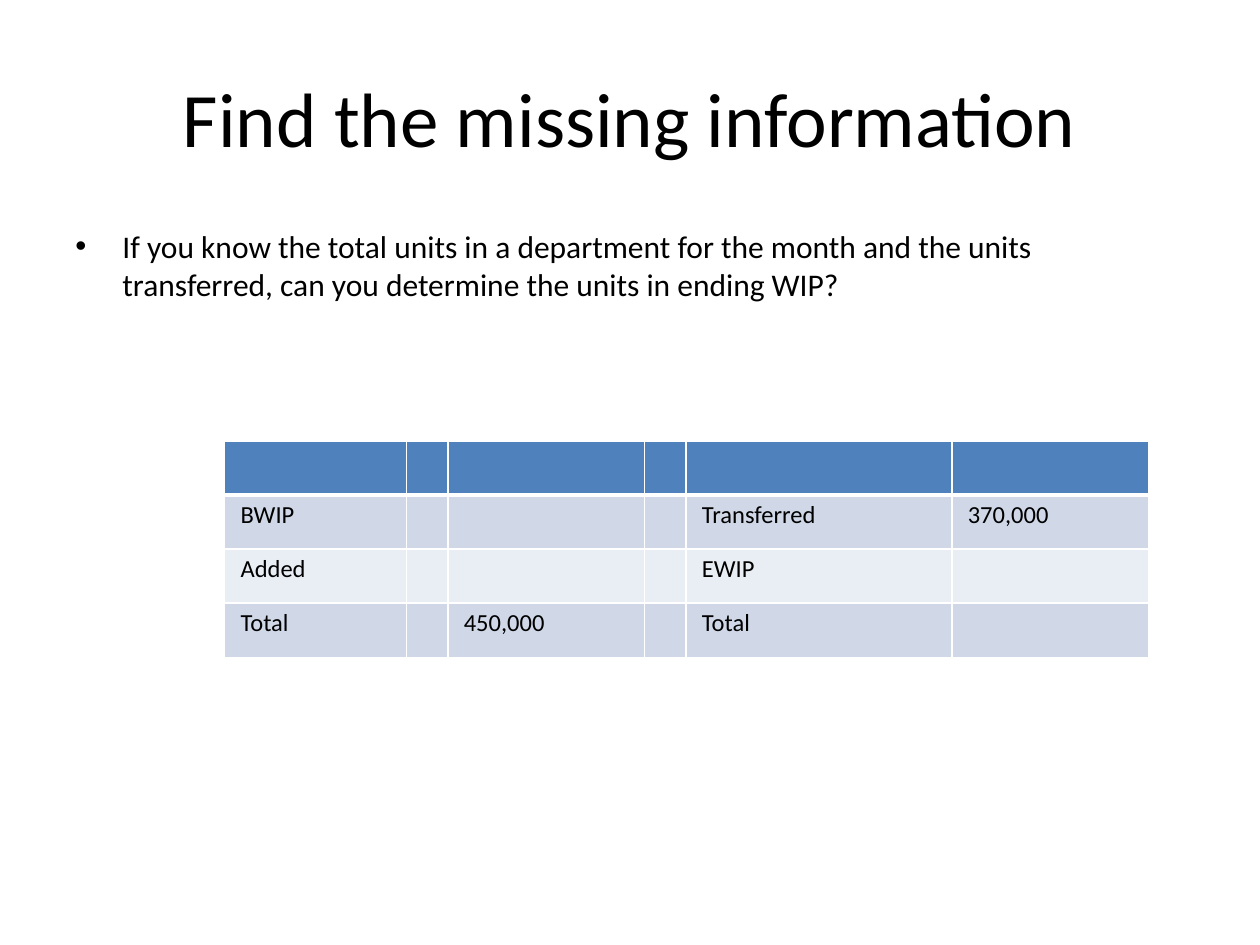
"""Build the slide on finding missing unit counts."""
from lxml import etree
from pptx import Presentation
from pptx import util as u
from pptx.dml.color import RGBColor
from pptx.enum import text
from pptx.oxml import ns

FONT = "Calibri"
BLACK = RGBColor(0, 0, 0)
BLUE = RGBColor(0x4F, 0x81, 0xBD)
BANDS = (RGBColor(0xD0, 0xD8, 0xE8), RGBColor(0xE9, 0xED, 0xF4))
RULE = "FFFFFF"

TITLE = "Find the missing information"
POINT = ("If you know the total units in a department for the month and the "
         "units transferred, can you determine the units in ending WIP?")
ROWS = [
    ("", "", "", "", "", ""),
    ("BWIP", "", "", "", "Transferred", "370,000"),
    ("Added", "", "", "", "EWIP", ""),
    ("Total", "", "450,000", "", "Total", ""),
]
COLS = (3.66, 0.84, 3.96, 0.84, 5.36, 3.96)
HIGH = 1.09
EDGE, WIDE = 1.27, 22.86


def add_run(para, words, size):
    run = para.add_run()
    run.text = words
    run.font.name = FONT
    run.font.size = u.Pt(size)
    run.font.color.rgb = BLACK


def add_box(slide, top, high, words, size, anchor):
    box = slide.shapes.add_textbox(u.Cm(EDGE), u.Cm(top), u.Cm(WIDE), u.Cm(high))
    frame = box.text_frame
    frame.word_wrap = True
    frame.vertical_anchor = anchor
    para = frame.paragraphs[0]
    add_run(para, words, size)
    return para


def set_bullet(para, indent):
    props = para._p.get_or_add_pPr()
    props.set("marL", str(u.Cm(indent)))
    props.set("indent", str(-u.Cm(indent)))
    etree.SubElement(props, ns.qn("a:buFont")).set("typeface", "Arial")
    etree.SubElement(props, ns.qn("a:buChar")).set("char", "•")


def set_rules(cell, widths):
    props = cell._tc.get_or_add_tcPr()
    for side, width in zip("LRTB", widths):
        line = etree.SubElement(props, ns.qn("a:ln" + side), w=str(u.Pt(width)))
        fill = etree.SubElement(line, ns.qn("a:solidFill"))
        etree.SubElement(fill, ns.qn("a:srgbClr"), val=RULE)


def add_grid(slide, left, top):
    frame = slide.shapes.add_table(len(ROWS), len(COLS), u.Cm(left), u.Cm(top),
                                   u.Cm(sum(COLS)), u.Cm(HIGH * len(ROWS)))
    table = frame.table
    for col, width in zip(table.columns, COLS):
        col.width = u.Cm(width)
    for i, row in enumerate(ROWS):
        table.rows[i].height = u.Cm(HIGH)
        for j, words in enumerate(row):
            cell = table.cell(i, j)
            cell.margin_left = cell.margin_right = u.Cm(0.32)
            cell.margin_top = cell.margin_bottom = u.Cm(0.11)
            set_rules(cell, (1, 1, 3 if i == 1 else 1, 3 if i == 0 else 1))
            cell.fill.solid()
            cell.fill.fore_color.rgb = BANDS[(i - 1) % 2] if i else BLUE
            if words:
                add_run(cell.text_frame.paragraphs[0], words, 14)


def main():
    deck = Presentation()
    deck.slide_width, deck.slide_height = u.Cm(25.4), u.Cm(19.05)
    slide = deck.slides.add_slide(deck.slide_layouts[6])
    head = add_box(slide, 0.76, 3.18, TITLE, 44, text.MSO_ANCHOR.MIDDLE)
    head.alignment = text.PP_ALIGN.CENTER
    body = add_box(slide, 4.45, 12.57, POINT, 18, text.MSO_ANCHOR.TOP)
    body.space_before = u.Pt(3.6)
    set_bullet(body, 0.95)
    add_grid(slide, 4.53, 8.89)
    deck.save("out.pptx")


if __name__ == "__main__":
    main()
